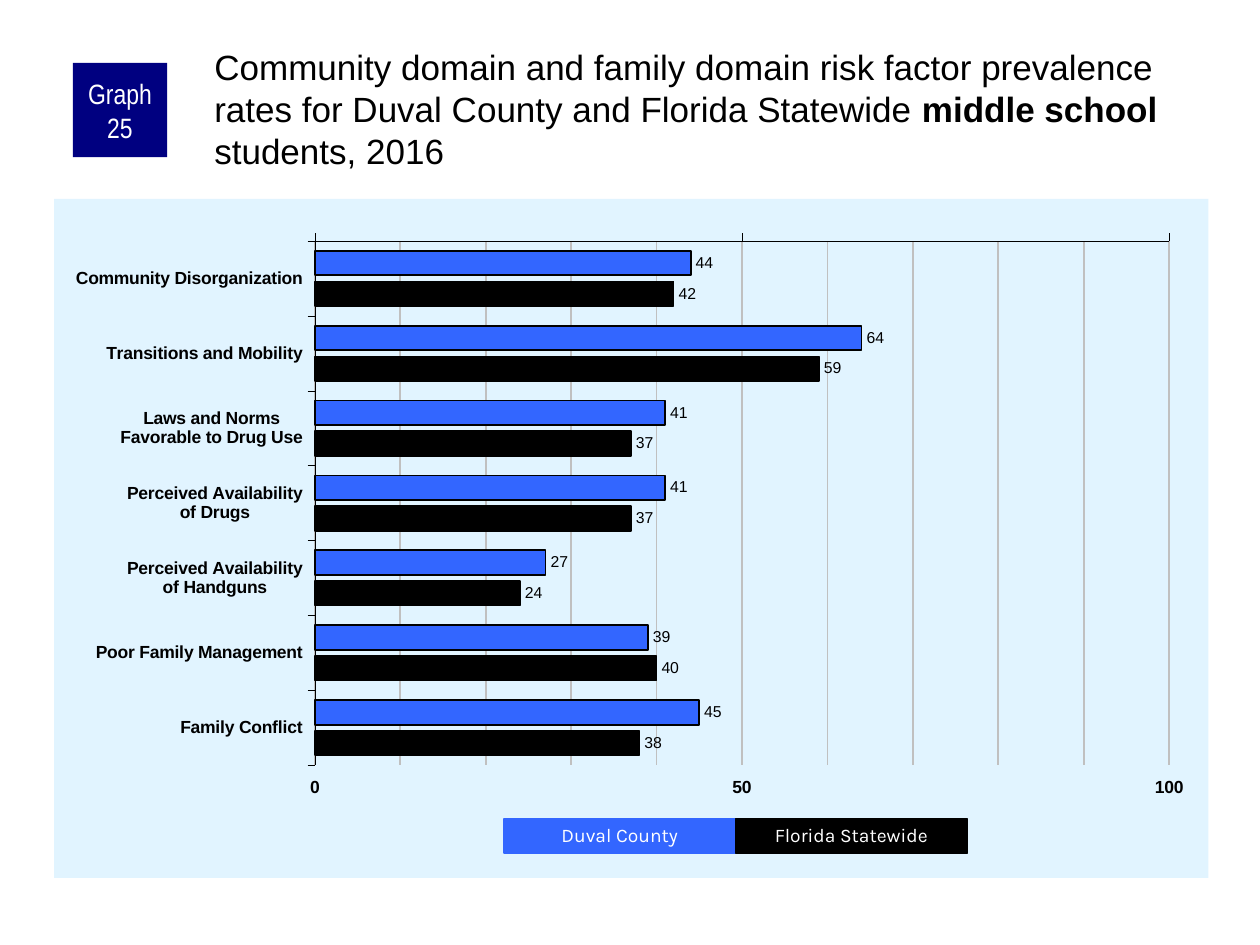
from copy import deepcopy
from dataclasses import dataclass

from lxml import etree
from pptx import Presentation
from pptx.chart.data import CategoryChartData
from pptx.dml.color import RGBColor
from pptx.enum.chart import XL_CHART_TYPE as ChartType
from pptx.enum.chart import XL_LABEL_POSITION as LabelPosition
from pptx.enum.chart import XL_TICK_LABEL_POSITION as TickLabels
from pptx.enum.chart import XL_TICK_MARK as TickMark
from pptx.enum.shapes import MSO_SHAPE as Preset
from pptx.enum.text import MSO_ANCHOR as Anchor
from pptx.enum.text import MSO_AUTO_SIZE as AutoSize
from pptx.enum.text import PP_ALIGN as Align
from pptx.oxml import parse_xml
from pptx.oxml.ns import nsdecls, qn
from pptx.util import Cm, Pt

COLORS = {
    "panel": "E1F4FF",
    "badge": "000080",
    "duval": "3366FF",
    "black": "000000",
    "white": "FFFFFF",
    "grid": "C0C0C0",
}


@dataclass
class Region:
    name: str
    color: str
    rates: tuple[int, ...]


@dataclass
class Box:
    left: float
    top: float
    width: float
    height: float

    def lengths(self) -> tuple:
        return Cm(self.left), Cm(self.top), Cm(self.width), Cm(self.height)


RISK_FACTORS = (
    "Community Disorganization",
    "Transitions and Mobility",
    "Laws and Norms\nFavorable to Drug Use",
    "Perceived Availability\nof Drugs",
    "Perceived Availability\nof Handguns",
    "Poor Family Management",
    "Family Conflict",
)
REGIONS = (
    Region("Duval County", "duval", (44, 64, 41, 41, 27, 39, 45)),
    Region("Florida Statewide", "black", (42, 59, 37, 37, 24, 40, 38)),
)
TITLE = (
    ("Community domain and family domain risk factor prevalence rates "
     "for Duval County and Florida Statewide ", False),
    ("middle school", True),
    (" students, 2016", False),
)
LEGEND = Box(10.16, 16.51, 4.67, 0.69)


def rgb(color: str) -> RGBColor:
    return RGBColor.from_string(COLORS[color])


def style_font(font, face: str, size: float, color: str, bold: bool = False) -> None:
    font.name = face
    font.size = Pt(size)
    font.bold = bold
    font.color.rgb = rgb(color)


def style_line(line, color: str, width: float) -> None:
    line.color.rgb = rgb(color)
    line.width = Pt(width)


def add_label(page, box: Box, text: str, fill: str, face: str, size: float):
    """Add a filled rectangle holding centred white text."""
    label = page.shapes.add_shape(Preset.RECTANGLE, *box.lengths())
    label.shadow.inherit = False
    label.fill.solid()
    label.fill.fore_color.rgb = rgb(fill)
    label.line.fill.background()
    frame = label.text_frame
    frame.word_wrap = True
    frame.vertical_anchor = Anchor.MIDDLE
    para = frame.paragraphs[0]
    para.alignment = Align.CENTER
    span = para.add_run()
    span.text = text
    style_font(span.font, face, size, "white")
    return label


def add_title(page) -> None:
    title = page.shapes.title
    title.left, title.top, title.width, title.height = Box(4.24, 0.84, 20.12, 2.11).lengths()
    frame = title.text_frame
    frame.word_wrap = True
    frame.auto_size = AutoSize.NONE
    frame.vertical_anchor = Anchor.TOP
    frame.margin_left = frame.margin_top = Cm(0.08)
    frame.margin_right = frame.margin_bottom = 0
    para = frame.paragraphs[0]
    para.alignment = Align.LEFT
    for text, bold in TITLE:
        span = para.add_run()
        span.text = text
        style_font(span.font, "Arial", 20, "black", bold)


def style_axis(axis) -> None:
    axis.major_tick_mark = TickMark.OUTSIDE
    axis.minor_tick_mark = TickMark.NONE
    style_font(axis.tick_labels.font, "Arial", 10, "black", True)
    style_line(axis.format.line, "black", 0.25)


def style_backgrounds(chart) -> None:
    """Place the plot area and fill the panel behind it."""
    space = chart._chartSpace
    area = space.find(qn("c:chart")).find(qn("c:plotArea"))
    for layout in area.findall(qn("c:layout")):
        area.remove(layout)
    layout = parse_xml(f'<c:layout {nsdecls("c")}><c:manualLayout/></c:layout>')
    settings = {
        "layoutTarget": "inner", "xMode": "edge", "yMode": "edge",
        "x": 0.226, "y": 0.062, "w": 0.74, "h": 0.772,
    }
    for tag, value in settings.items():
        etree.SubElement(layout[0], qn(f"c:{tag}")).set("val", str(value))
    area.insert(0, layout)

    def surface(fill: str):
        return parse_xml(
            f'<c:spPr {nsdecls("c", "a")}>{fill}<a:ln><a:noFill/></a:ln></c:spPr>')

    area.append(surface("<a:noFill/>"))
    panel = f'<a:solidFill><a:srgbClr val="{COLORS["panel"]}"/></a:solidFill>'
    space.find(qn("c:chart")).addnext(surface(panel))

    # Minor gridlines share the look of the major ones
    major = next(area.iter(qn("c:majorGridlines")))
    minor = next(area.iter(qn("c:minorGridlines")))
    minor.append(deepcopy(major.find(qn("c:spPr"))))


def add_rate_chart(page) -> None:
    data = CategoryChartData()
    data.categories = RISK_FACTORS
    for region in REGIONS:
        data.add_series(region.name, region.rates)
    box = Box(1.09, 4.01, 23.27, 13.69)
    chart = page.shapes.add_chart(ChartType.BAR_CLUSTERED, *box.lengths(), data).chart
    chart.has_title = False
    chart.has_legend = False
    style_font(chart.font, "Arial", 11.8, "black")

    # Axes: first factor on top, rate labels along the bottom
    factors, rates = chart.category_axis, chart.value_axis
    style_axis(factors)
    style_axis(rates)
    factors.reverse_order = True
    rates.tick_label_position = TickLabels.HIGH
    rates.minimum_scale, rates.maximum_scale = 0, 100
    rates.major_unit, rates.minor_unit = 50, 10
    rates.has_major_gridlines = rates.has_minor_gridlines = True
    style_line(rates.major_gridlines.format.line, "grid", 1)

    # Bars
    plot = chart.plots[0]
    plot.vary_by_categories = False
    plot.gap_width, plot.overlap = 80, -25
    for region, bars in zip(REGIONS, plot.series):
        bars.format.fill.solid()
        bars.format.fill.fore_color.rgb = rgb(region.color)
        style_line(bars.format.line, "black", 1)
        labels = bars.data_labels
        labels.show_value = True
        labels.position = LabelPosition.OUTSIDE_END
        style_font(labels.font, "Arial", 9, "black")
    style_backgrounds(chart)


def main() -> None:
    deck = Presentation()
    deck.slide_width, deck.slide_height = Cm(25.4), Cm(19.05)
    page = deck.slides.add_slide(deck.slide_layouts[5])
    add_rate_chart(page)
    add_title(page)

    # Graph number
    badge = add_label(page, Box(1.47, 1.27, 1.9, 1.9), "Graph 25", "badge", "Arial Narrow", 16)
    frame = badge.text_frame
    frame.margin_left = frame.margin_right = Cm(0.13)
    frame.margin_top = frame.margin_bottom = 0

    # Legend
    for index, region in enumerate(REGIONS):
        box = Box(LEGEND.left + index * LEGEND.width, LEGEND.top, LEGEND.width, LEGEND.height)
        key = add_label(page, box, region.name, region.color, "Karla", 11)
        style_line(key.line, region.color, 0.75)
        key.text_frame.auto_size = AutoSize.SHAPE_TO_FIT_TEXT
        key.text_frame.paragraphs[0].line_spacing = 0.9

    deck.save("out.pptx")


if __name__ == "__main__":
    main()
